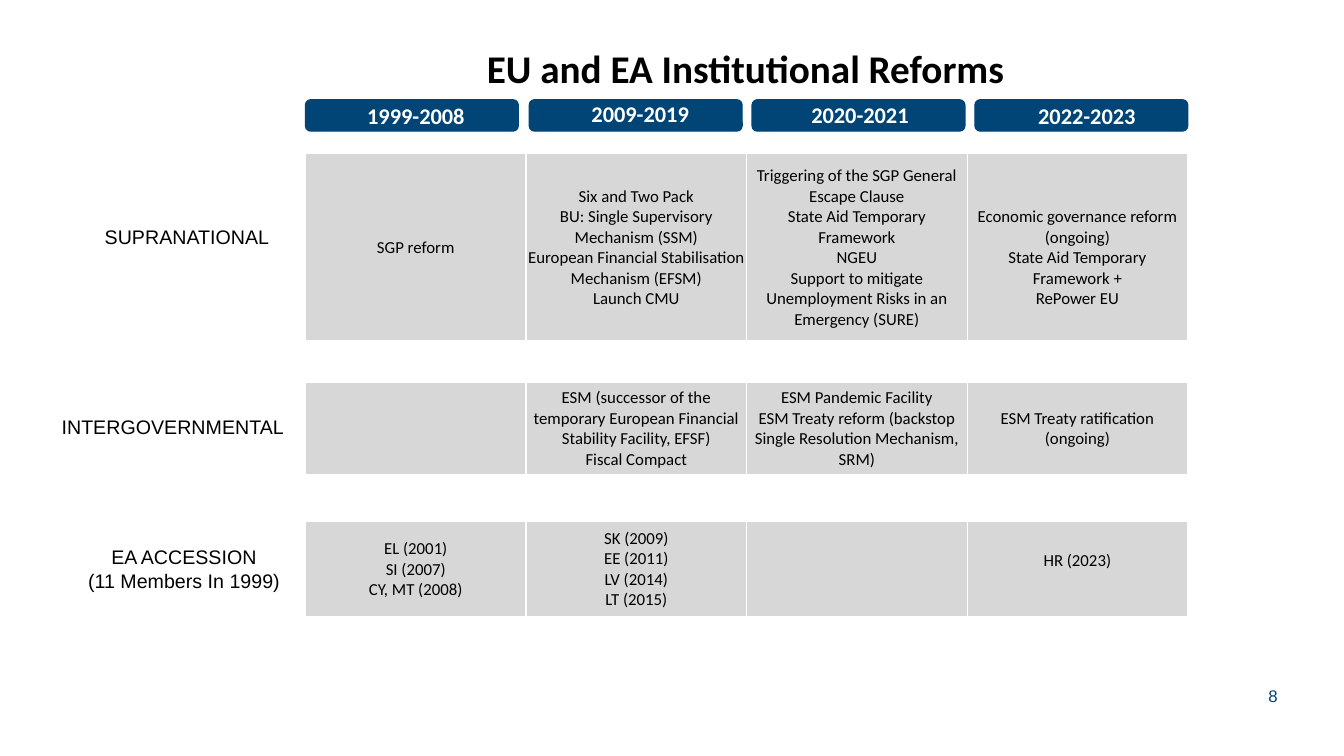
from typing import NamedTuple

from lxml import etree
from pptx import Presentation
from pptx.dml.color import RGBColor
from pptx.enum.shapes import MSO_SHAPE
from pptx.enum.text import MSO_ANCHOR, PP_ALIGN
from pptx.oxml.ns import qn
from pptx.util import Pt

PX = 9144  # EMU per px, 100 px to the inch
ROUND = MSO_SHAPE.ROUNDED_RECTANGLE
LEFT, CENTER, RIGHT = PP_ALIGN.LEFT, PP_ALIGN.CENTER, PP_ALIGN.RIGHT
TOP, MIDDLE, BOTTOM = MSO_ANCHOR.TOP, MSO_ANCHOR.MIDDLE, MSO_ANCHOR.BOTTOM
NAVY, GREY, WHITE, BLACK = "004575", "D7D7D7", "FFFFFF", "000000"


class Style(NamedTuple):
    size: int
    font: str
    color: str = BLACK
    bold: bool = False
    align: PP_ALIGN = CENTER
    anchor: MSO_ANCHOR = TOP


class Label(NamedTuple):
    text: str
    left: int
    top: int
    width: int
    height: int
    style: Style


class Cell(NamedTuple):
    text: str = ""
    above: int = 1
    below: int = 0


HEAD = Style(28, "Calibri", bold=True, align=LEFT)
YEARS = Style(16, "Calibri", WHITE, True)
LEVEL = Style(14, "Arial")
PAGE = Style(12, "Arial", NAVY, align=RIGHT, anchor=BOTTOM)
BODY = Style(12, "Calibri", anchor=MIDDLE)

BARS = (303, 525, 746, 967)
LABELS = (
    Label("EU and EA Institutional Reforms", 473, 39, 626, 88, HEAD),
    Label("1999-2008", 307, 96, 211, 37, YEARS),
    Label("2009-2019", 563, 94, 144, 37, YEARS),
    Label("2020-2021", 781, 95, 144, 37, YEARS),
    Label("2022-2023", 1006, 96, 144, 37, YEARS),
    Label("SUPRANATIONAL", 54, 218, 263, 54, LEVEL),
    Label("INTERGOVERNMENTAL", 40, 407, 263, 52, LEVEL),
    Label("EA ACCESSION\n(11 Members In 1999)", 65, 536, 235, 85, LEVEL),
    Label("8", 1228, 665, 49, 40, PAGE),
)
HEIGHTS = (187, 40, 92, 46, 95)
# Reform rows alternate with empty spacer rows
REFORMS = (
    (
        Cell("SGP reform"),
        Cell("Six and Two Pack\nBU: Single Supervisory Mechanism (SSM)\n"
             "European Financial Stabilisation Mechanism (EFSM)\nLaunch CMU"),
        Cell("Triggering of the SGP General Escape Clause\n"
             "State Aid Temporary Framework\nNGEU\n"
             "Support to mitigate Unemployment Risks in an Emergency (SURE)"),
        Cell("Economic governance reform (ongoing)\n"
             "State Aid Temporary Framework +\nRePower EU", above=21),
    ),
    (
        Cell(),
        Cell("ESM (successor of the temporary European Financial "
             "Stability Facility, EFSF)\nFiscal Compact"),
        Cell("ESM Pandemic Facility\nESM Treaty reform (backstop "
             "Single Resolution Mechanism, SRM)"),
        Cell("ESM Treaty ratification (ongoing)"),
    ),
    (
        Cell("EL (2001)\nSI (2007)\nCY, MT (2008)"),
        Cell("SK (2009)\nEE (2011)\nLV (2014)\nLT (2015)"),
        Cell(),
        Cell("HR (2023)", below=18),
    ),
)


def rgb(code: str) -> RGBColor:
    return RGBColor.from_string(code)


def write(frame, text: str, style: Style) -> None:
    frame.text = text
    for para in frame.paragraphs:
        para.alignment = style.align
        font = para.font
        font.size, font.name, font.bold = Pt(style.size), style.font, style.bold
        font.color.rgb = rgb(style.color)


def add_bar(slide, left: int) -> None:
    bar = slide.shapes.add_shape(ROUND, left * PX, 99 * PX, 211 * PX, 31 * PX)
    bar.shadow.inherit = False
    bar.fill.solid()
    bar.fill.fore_color.rgb = rgb(NAVY)
    bar.line.color.rgb = rgb(NAVY)
    bar.line.width = Pt(1)


def add_label(slide, label: Label) -> None:
    area = (n * PX for n in label[1:5])
    frame = slide.shapes.add_textbox(*area).text_frame
    frame.word_wrap = True
    frame.vertical_anchor = label.style.anchor
    write(frame, label.text, label.style)


def add_edges(cell, lower: int) -> None:
    """Draw white borders, the bottom one `lower` points wide."""
    props = cell._tc.get_or_add_tcPr()
    for side, width in (("L", 1), ("R", 1), ("T", 1), ("B", lower)):
        line = etree.SubElement(props, qn(f"a:ln{side}"), w=str(Pt(width)))
        fill = etree.SubElement(line, qn("a:solidFill"))
        etree.SubElement(fill, qn("a:srgbClr"), val=WHITE)


def add_grid(slide) -> None:
    frame = slide.shapes.add_table(
        len(HEIGHTS), len(BARS), 303 * PX, 152 * PX, 875 * PX, sum(HEIGHTS) * PX)
    table = frame.table
    table.first_row = table.horz_banding = False
    for row, height in enumerate(HEIGHTS):
        table.rows[row].height = height * PX
        spacer = row % 2 == 1
        for col in range(len(BARS)):
            cell = table.cell(row, col)
            item = Cell() if spacer else REFORMS[row // 2][col]
            add_edges(cell, 1 if row else 3)
            if spacer:
                cell.fill.background()
            else:
                cell.fill.solid()
                cell.fill.fore_color.rgb = rgb(GREY)
            cell.margin_left = cell.margin_right = PX
            cell.margin_top, cell.margin_bottom = item.above * PX, item.below * PX
            cell.vertical_anchor = BODY.anchor
            write(cell.text_frame, item.text, BODY)


def main() -> None:
    deck = Presentation()
    deck.slide_width, deck.slide_height = 1333 * PX, 750 * PX
    slide = deck.slides.add_slide(deck.slide_layouts[6])
    add_grid(slide)
    for left in BARS:
        add_bar(slide, left)
    for label in LABELS:
        add_label(slide, label)
    deck.save("out.pptx")


if __name__ == "__main__":
    main()
